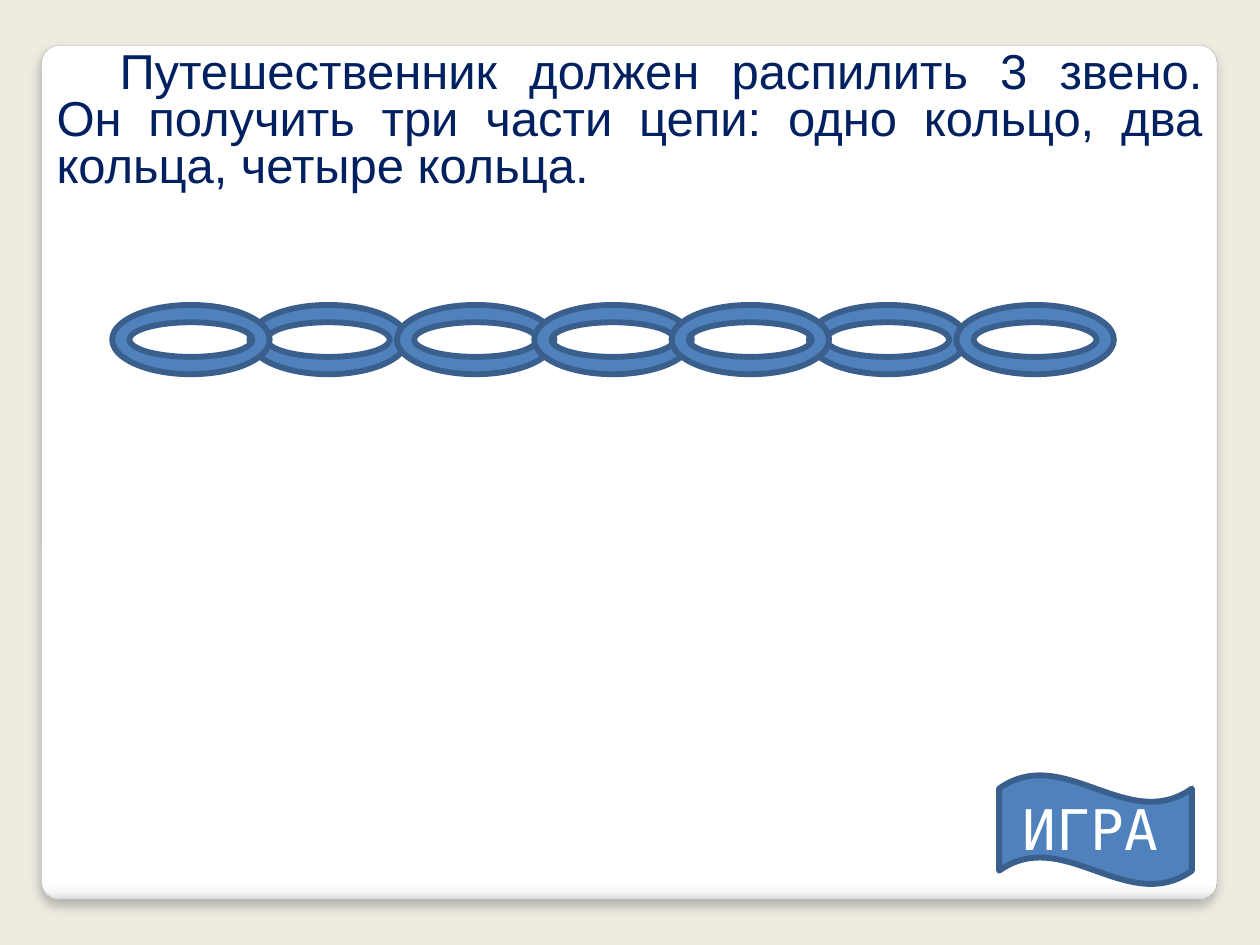
from lxml.etree import SubElement
from pptx import Presentation
from pptx.dml.color import RGBColor
from pptx.enum.shapes import MSO_SHAPE
from pptx.enum.text import MSO_AUTO_SIZE, PP_ALIGN
from pptx.oxml.ns import qn
from pptx.util import Inches, Pt

BACKGROUND = RGBColor(0xEE, 0xEC, 0xE1)
PANEL_LINE = RGBColor(0xA4, 0xA4, 0xA4)
BLUE = RGBColor(0x4F, 0x81, 0xBD)
DARK_BLUE = RGBColor(0x3A, 0x5F, 0x8C)
NAVY = RGBColor(0x00, 0x20, 0x60)
WHITE = RGBColor(0xFF, 0xFF, 0xFF)
BLACK = RGBColor(0x00, 0x00, 0x00)
PANEL_STOPS = [
    (0, WHITE),
    (98, WHITE),
    (99, RGBColor(0xF7, 0xF7, 0xF7)),
    (100, RGBColor(0xDA, 0xDA, 0xDA)),
]

CHAIN_LEFT, CHAIN_TOP = 0.89, 2.42
LINK_WIDTH, LINK_HEIGHT = 1.25, 0.55
LINK_STEP = 1.09
SECTION_GAP = 0.08


def add_figure(shapes, kind, left, top, width, height, line_color=DARK_BLUE, line_width=3.35):
    shape = shapes.add_shape(kind, Inches(left), Inches(top), Inches(width), Inches(height))
    shape.shadow.inherit = False
    shape.fill.solid()
    shape.fill.fore_color.rgb = BLUE
    shape.line.color.rgb = line_color
    shape.line.width = Pt(line_width)
    return shape


def add_text(shapes, text, left, top, width, height, *, font, size, color,
             align=PP_ALIGN.LEFT, line_spacing=1.0):
    frame = shapes.add_textbox(Inches(left), Inches(top), Inches(width), Inches(height)).text_frame
    frame.word_wrap = True
    frame.auto_size = MSO_AUTO_SIZE.SHAPE_TO_FIT_TEXT
    paragraph = frame.paragraphs[0]
    paragraph.alignment = align
    paragraph.line_spacing = line_spacing
    run = paragraph.add_run()
    run.text = text
    run.font.name = font
    run.font.size = Pt(size)
    run.font.color.rgb = color


def set_gradient(shape, stops, angle):
    shape.fill.gradient()
    shape.fill.gradient_angle = angle
    stop_list = shape.element.spPr.find(qn("a:gradFill")).find(qn("a:gsLst"))
    for stop in list(stop_list):
        stop_list.remove(stop)
    for position, color in stops:
        stop = SubElement(stop_list, qn("a:gs"), pos=str(position * 1000))
        SubElement(stop, qn("a:srgbClr"), val=str(color))


def set_shadow(shape, color, opacity, blur, distance, angle):
    effects = shape.element.spPr.find(qn("a:effectLst"))
    shadow = SubElement(effects, qn("a:outerShdw"), blurRad=str(Pt(blur)),
                        dist=str(Pt(distance)), dir=str(angle * 60000), rotWithShape="0")
    shade = SubElement(shadow, qn("a:srgbClr"), val=str(color))
    SubElement(shade, qn("a:alpha"), val=str(opacity * 1000))


def add_panel(shapes):
    panel = add_figure(shapes, MSO_SHAPE.ROUNDED_RECTANGLE, 0.33, 0.36, 9.33, 6.78,
                       PANEL_LINE, 0.16)
    panel.adjustments[0] = 0.021
    set_gradient(panel, PANEL_STOPS, 270)
    set_shadow(panel, BLACK, 25, 6, 4, 90)


def add_links(shapes, order, section):
    for index in order:
        left = CHAIN_LEFT + index * LINK_STEP + section * SECTION_GAP
        add_figure(shapes, MSO_SHAPE.DONUT, left, CHAIN_TOP, LINK_WIDTH, LINK_HEIGHT)


def add_chain(shapes):
    add_links(shapes.add_group_shape().shapes, [1, 0], 0)
    add_links(shapes, [2], 1)
    four_links = shapes.add_group_shape().shapes
    add_links(four_links, [3, 5, 4], 1)
    add_links(four_links, [6], 2)


def add_game_flag(shapes):
    flag = shapes.add_group_shape().shapes
    add_figure(flag, MSO_SHAPE.WAVE, 7.93, 6.15, 1.53, 0.87)
    add_text(flag, "ИГРА", 8.02, 6.26, 1.89, 0.64,
             font="DejaVu Sans Mono", size=32, color=WHITE)


def main():
    presentation = Presentation()
    presentation.slide_width = Inches(10)
    presentation.slide_height = Inches(7.5)
    slide = presentation.slides.add_slide(presentation.slide_layouts[6])
    slide.background.fill.solid()
    slide.background.fill.fore_color.rgb = BACKGROUND

    add_panel(slide.shapes)
    add_text(slide.shapes,
             "\tПутешественник должен распилить 3 звено. Он получить три части цепи: "
             "одно кольцо, два кольца, четыре кольца.",
             0.35, 0.36, 9.29, 1.23, font="Arial", size=28, color=NAVY,
             align=PP_ALIGN.JUSTIFY, line_spacing=0.8)
    add_chain(slide.shapes)
    add_game_flag(slide.shapes)
    presentation.save("out.pptx")


if __name__ == "__main__":
    main()
